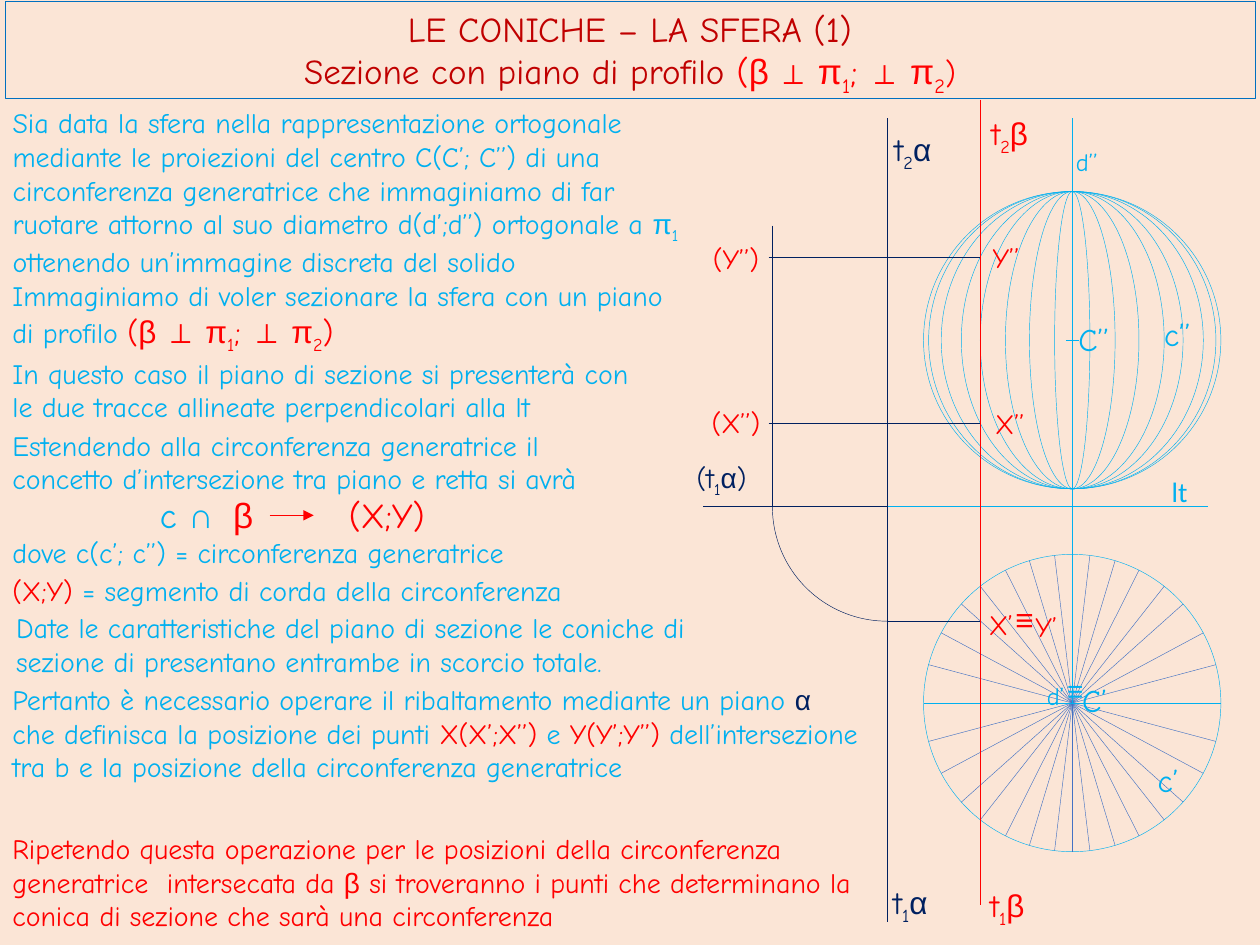
from math import sqrt

from lxml.etree import SubElement
from pptx import Presentation
from pptx.dml.color import RGBColor
from pptx.enum.shapes import MSO_CONNECTOR as Connector, MSO_SHAPE as Preset
from pptx.enum.text import MSO_ANCHOR as Anchor, MSO_AUTO_SIZE as AutoSize, PP_ALIGN as Align
from pptx.oxml.ns import qn
from pptx.util import Inches, Pt

COLORS = {
    "background": "FBE5D6", "border": "0070C0", "title": "C00000", "red": "FF0000",
    "sky": "00B0F0", "spoke": "4472C4", "navy": "002060",
}
SYMBOL = {"font": "Arial"}
SUB = {"sub": True}
RED = {"color": "red"}
RED_18 = {"color": "red", "size": 18}
RED_SYMBOL = RED_18 | SYMBOL
RED_BOLD = RED_SYMBOL | {"bold": True}
RED_SUB = RED_18 | SUB

PLANE = [
    ("β", RED_SYMBOL), (" ⊥ ", RED_BOLD), ("π", RED_SYMBOL), ("1", RED_SUB), ("; ", RED_18),
    ("⊥", RED_BOLD), (" π", RED_SYMBOL), ("2", RED_SUB), (")", RED_18),
]
TITLE = [
    ["LE CONICHE – LA SFERA (1)"],
    ["Sezione con piano di profilo ", ("(", RED)]
    + [(text, style if style.get("bold") or text == ")" else style | {"size": 20})
       for text, style in PLANE],
]
INTRO = [[
    "Sia data la sfera nella rappresentazione ortogonale mediante le proiezioni del centro "
    "C(C’; C’’) di una circonferenza generatrice che immaginiamo di far ruotare attorno al suo "
    "diametro d(d’;d’’) ortogonale a ",
    ("π", SYMBOL), ("1 ", SUB), "ottenendo un’immagine discreta del solido",
]]
PASSAGES = [
    ((0, 2.16, 5.55, 0.67), "sky",
     ["Immaginiamo di voler sezionare la sfera con un piano di profilo ", ("(", RED_18)] + PLANE),
    ((0, 2.78, 5.28, 0.64), "sky",
     ["In questo caso il piano di sezione si presenterà con le due tracce allineate "
      "perpendicolari alla lt"]),
    ((0, 3.35, 5.2, 0.55), "sky",
     ["Estendendo alla circonferenza generatrice il concetto d’intersezione tra piano e retta "
      "si avrà"]),
    ((0, 4.2, 5.2, 0.37), "sky", ["dove c(c’; c’’) = circonferenza generatrice"]),
    ((0, 4.5, 5.24, 0.31), "sky",
     [("(X;Y) ", RED), "= segmento di corda della circonferenza"]),
    ((0.03, 4.8, 6.12, 0.64), "sky",
     ["Date le caratteristiche del piano di sezione le coniche di sezione di presentano "
      "entrambe in scorcio totale."]),
    ((0, 5.37, 6.91, 1.18), "sky",
     ["Pertanto è necessario operare il ribaltamento mediante un piano ",
      ("α", SYMBOL | {"color": "navy"}), " che definisca la posizione dei punti ",
      ("X(X’;X’’) ", RED), "e ", ("Y(Y’;Y’’) ", RED),
      "dell’intersezione tra b e la posizione della circonferenza generatrice"]),
    ((0, 6.55, 6.9, 0.91), "red",
     ["Ripetendo questa operazione per le posizioni della circonferenza generatrice  "
      "intersecata da ", ("β", SYMBOL),
      " si troveranno i punti che determinano la conica di sezione che sarà una circonferenza"]),
]
LABELS = [
    ((1.17, 3.87, 0.95), 20, "sky", ["c ", ("∩  ", SYMBOL), ("β", SYMBOL | RED)]),
    ((2.67, 3.87, 0.82), 20, "red", ["(X;Y)"]),
    ((7.77, 0.86, 0.56), 18, "red", ["t", ("2", SUB), ("β", SYMBOL)]),
    ((7.76, 6.98, 0.56), 18, "red", ["t", ("1", SUB), ("β", SYMBOL)]),
    ((7, 0.98, 0.59), 18, "navy", ["t", ("2", SUB), ("α", SYMBOL)]),
    ((6.99, 6.96, 0.56), 18, "navy", ["t", ("1", SUB), ("α", SYMBOL)]),
    ((5.43, 3.61, 0.75), 16, "navy", ["(t", ("1", SUB), ("α", SYMBOL), ")"]),
    ((7.75, 4.77, 0.5), 16, "red", ["X’"]),
    ((7.96, 4.71, 0.41), 18, "red", [("≡", SYMBOL | {"bold": True})]),
    ((8.12, 4.79, 0.53), 16, "red", ["Y’"]),
    ((7.78, 1.86, 0.47), 16, "red", ["Y’’"]),
    ((7.8, 3.18, 0.55), 16, "red", ["X’’"]),
    ((5.56, 1.87, 0.59), 16, "red", ["(Y’’)"]),
    ((5.55, 3.17, 0.63), 16, "red", ["(X’’)"]),
    ((8.46, 2.49, 0.47), 18, "sky", ["C’’"]),
    ((8.49, 5.36, 0.47), 18, "sky", ["C’"]),
    ((9.14, 2.45, 0.53), 18, "sky", ["c’’"]),
    ((9.09, 5.99, 0.53), 18, "sky", ["c’"]),
    ((8.44, 1.12, 0.48), 14, "sky", ["d’’"]),
    ((8.21, 5.36, 0.48), 14, "sky", ["d’"]),
    ((8.37, 5.3, 0.41), 16, "sky", [("≡", SYMBOL)]),
    ((9.2, 3.72, 0.38), 16, "sky", [("lt", {"font": "Calibri"})]),
]
AXIS, FRONT, PLAN, RADIUS = 8.51, 2.7, 5.58, 1.18
MERIDIANS = [0.14, 0.34, 0.53, 0.73, 0.88, 1.04, 1.14]
GROUND, ALPHA, BETA, FOLD = 4.02, 7.04, 7.78, 6.13
SWING = ALPHA - FOLD
LINES = [
    ((6.61, GROUND), (9.59, GROUND), "sky"),
    ((5.58, GROUND), (ALPHA, GROUND), "navy"),
    ((AXIS, 0.94), (AXIS, PLAN), "sky"),
    ((AXIS, PLAN), (AXIS, PLAN + RADIUS), "spoke"),
    ((AXIS - RADIUS, PLAN), (AXIS + RADIUS, PLAN), "sky"),
    ((AXIS - 0.05, FRONT), (AXIS + 0.05, FRONT), "sky"),
    ((BETA, 0.79), (BETA, 7.18), "red"),
    ((ALPHA, 0.94), (ALPHA, 7.32), "navy"),
    ((FOLD, 1.79), (FOLD, GROUND), "navy"),
    ((ALPHA, GROUND + SWING), (BETA, GROUND + SWING), "navy"),
    ((6.1, 2.04), (BETA, 2.04), "navy"),
    ((6.1, 3.36), (BETA, 3.36), "navy"),
]


def rgb(name):
    """Return the named colour."""
    return RGBColor.from_string(COLORS[name])


def place(shape, box):
    """Move and size a shape in inches."""
    shape.left, shape.top, shape.width, shape.height = map(Inches, box)


def write(shape, paragraphs, size=16, color="sky", align=Align.LEFT):
    """Fill a shape with paragraphs of plain or styled runs."""
    frame = shape.text_frame
    frame.word_wrap = True
    frame.auto_size = AutoSize.NONE
    frame.vertical_anchor = Anchor.TOP
    for index, runs in enumerate(paragraphs):
        paragraph = frame.add_paragraph() if index else frame.paragraphs[0]
        paragraph.alignment = align
        paragraph.space_before = Pt(0)
        properties = paragraph._p.get_or_add_pPr()
        properties.set("marL", "0")
        properties.set("indent", "0")
        SubElement(properties, qn("a:buNone"))
        for item in runs:
            text, style = (item, {}) if isinstance(item, str) else item
            run = paragraph.add_run()
            run.text = text
            run.font.name = style.get("font", "Comic Neue")
            run.font.size = Pt(style.get("size", size))
            run.font.bold = style.get("bold", False)
            run.font.color.rgb = rgb(style.get("color", color))
            if style.get("sub"):
                run.font._element.set("baseline", "-25000")


def add_text(slide, box, runs, **style):
    """Add a text box of one paragraph."""
    write(slide.shapes.add_textbox(*map(Inches, box)), [runs], **style)


def add_line(slide, start, end, color, arrow=False):
    """Add a thin straight line, optionally with an arrowhead."""
    line = slide.shapes.add_connector(Connector.STRAIGHT, *map(Inches, start + end))
    line.line.color.rgb = rgb(color)
    line.line.width = Pt(0.25)
    SubElement(line._element.spPr, qn("a:effectLst"))
    if arrow:
        SubElement(line.line._get_or_add_ln(), qn("a:tailEnd"), type="triangle")


def add_curve(slide, preset, center, half_width, half_height, color):
    """Add an unfilled curve around a centre."""
    x, y = center
    box = (x - half_width, y - half_height, 2 * half_width, 2 * half_height)
    curve = slide.shapes.add_shape(preset, *map(Inches, box))
    curve.shadow.inherit = False
    curve.fill.background()
    curve.line.color.rgb = rgb(color)
    curve.line.width = Pt(0.25)
    return curve


def main():
    """Build the slide on the section of a sphere."""
    presentation = Presentation()
    presentation.slide_width, presentation.slide_height = Inches(10), Inches(7.5)
    slide = presentation.slides.add_slide(presentation.slide_layouts[1])
    slide.background.fill.solid()
    slide.background.fill.fore_color.rgb = rgb("background")

    title, body = slide.placeholders
    place(title, (0.04, 0.01, 9.92, 0.77))
    title.fill.solid()
    title.fill.fore_color.rgb = rgb("background")
    title.line.color.rgb = rgb("border")
    title.line.width = Pt(0.25)
    write(title, TITLE, size=20, color="title", align=Align.CENTER)
    place(body, (0, 0.79, 5.51, 1.45))
    write(body, INTRO)

    for center in (FRONT, PLAN):
        add_curve(slide, Preset.OVAL, (AXIS, center), RADIUS, RADIUS, "sky")
    for offset in MERIDIANS:
        add_curve(slide, Preset.OVAL, (AXIS, FRONT), offset, RADIUS, "sky")
        rise = sqrt(RADIUS ** 2 - offset ** 2)
        for run in (offset, -offset):
            add_line(slide, (AXIS - run, PLAN + rise), (AXIS + run, PLAN - rise), "spoke")
    arc = add_curve(slide, Preset.ARC, (ALPHA, GROUND), SWING, SWING, "navy")
    arc.adjustments[0], arc.adjustments[1] = 54, 108
    for start, end, color in LINES:
        add_line(slide, start, end, color)
    add_line(slide, (2.14, 4.09), (2.49, 4.09), "red", arrow=True)

    for box, color, runs in PASSAGES:
        add_text(slide, box, runs, color=color)
    for (left, top, width), size, color, runs in LABELS:
        add_text(slide, (left, top, width, 0.4), runs, size=size, color=color)
    presentation.save("out.pptx")


if __name__ == "__main__":
    main()
